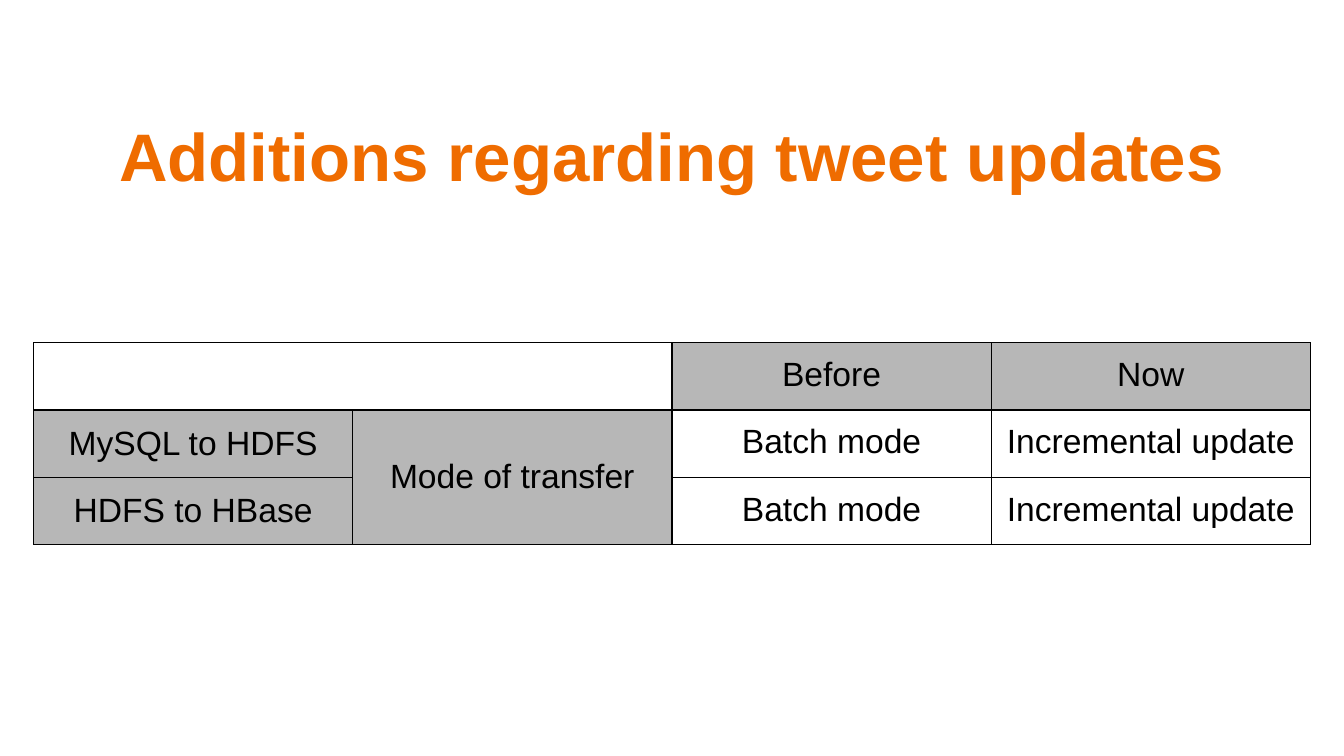
from dataclasses import dataclass

from lxml import etree
from pptx import Presentation
from pptx import util as u
from pptx.dml.color import RGBColor
from pptx.enum import text
from pptx.oxml.ns import qn


@dataclass(frozen=True)
class Theme:
    font: str = "Arial"
    title: str = "EF6C00"
    ink: str = "000000"
    header: str = "B7B7B7"
    title_size: int = 36
    cell_size: int = 18
    empty_size: int = 12
    border: float = 0.75
    inset: float = 0.1


T = Theme()
W = 10
H = W * 9 / 16
ROWS = [
    ["", "", "Before", "Now"],
    ["MySQL to HDFS", "Mode of transfer", "Batch mode", "Incremental update"],
    ["HDFS to HBase", "", "Batch mode", "Incremental update"],
]


def write(tf, words, size=T.cell_size, color=T.ink, bold=False):
    p = tf.paragraphs[0]
    p.alignment = text.PP_ALIGN.CENTER
    if not words:
        # Keeps an empty cell from stretching its row
        end = etree.SubElement(p._p, qn("a:endParaRPr"), sz=str(T.empty_size * 100))
        etree.SubElement(end, qn("a:latin"), typeface=T.font)
        return
    r = p.add_run()
    r.text = words
    r.font.name, r.font.size, r.font.bold = T.font, u.Pt(size), bold
    r.font.color.rgb = RGBColor.from_string(color)


def set_insets(box):
    box.margin_left = box.margin_right = u.Inches(T.inset)
    box.margin_top = box.margin_bottom = u.Inches(T.inset)


def set_borders(cell):
    tc_pr = cell._tc.get_or_add_tcPr()
    for i, side in enumerate(("lnL", "lnR", "lnT", "lnB")):
        ln = etree.Element(qn(f"a:{side}"), w=str(u.Pt(T.border)))
        fill = etree.SubElement(ln, qn("a:solidFill"))
        etree.SubElement(fill, qn("a:srgbClr"), val=T.ink)
        tc_pr.insert(i, ln)


def add_title(s, box, words):
    tf = s.shapes.add_textbox(*map(u.Inches, box)).text_frame
    tf.word_wrap = True
    set_insets(tf)
    write(tf, words, size=T.title_size, color=T.title, bold=True)


def add_comparison(s, box, rows):
    n_rows, n_cols = len(rows), len(rows[0])
    table = s.shapes.add_table(n_rows, n_cols, *map(u.Inches, box)).table
    table.first_row = table.horz_banding = False

    for y, row in enumerate(rows):
        for x, words in enumerate(row):
            cell = table.cell(y, x)
            # Column heads and row heads are shaded, the corner is not
            if (y == 0) != (x < 2):
                cell.fill.solid()
                cell.fill.fore_color.rgb = RGBColor.from_string(T.header)
            else:
                cell.fill.background()
            if y > 0 and x < 2:
                cell.vertical_anchor = text.MSO_ANCHOR.MIDDLE
            set_insets(cell)
            set_borders(cell)
            write(cell.text_frame, words)

    # Empty corner, and the row head shared by both transfers
    table.cell(0, 0).merge(table.cell(0, 1))
    table.cell(1, 1).merge(table.cell(2, 1))


def main():
    prs = Presentation()
    prs.slide_width, prs.slide_height = u.Inches(W), u.Inches(H)
    s = prs.slides.add_slide(prs.slide_layouts[6])
    add_title(s, (0.34, 0.75, W - 2 * 0.34, 0.77),
              "Additions regarding tweet updates")
    add_comparison(s, (0.25, 2.55, W - 2 * 0.25, 3 * 0.42), ROWS)
    prs.save("out.pptx")


if __name__ == "__main__":
    main()
